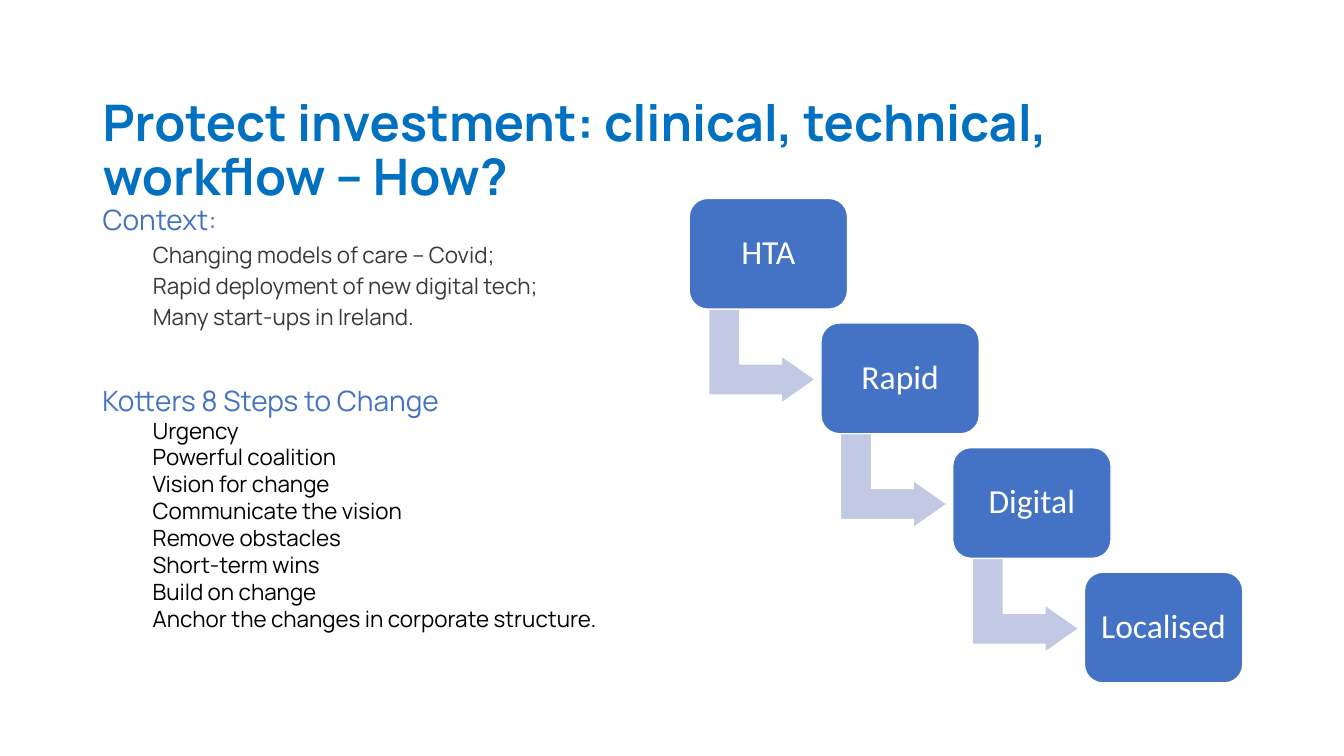
from lxml import etree
from pptx import Presentation
from pptx.dml.color import RGBColor
from pptx.enum.shapes import MSO_SHAPE
from pptx.enum.text import MSO_ANCHOR, MSO_AUTO_SIZE, PP_ALIGN
from pptx.oxml.ns import qn
from pptx.util import Cm, Pt

ROUNDED = MSO_SHAPE.ROUNDED_RECTANGLE
BENT_ARROW = MSO_SHAPE.BENT_UP_ARROW
TOP, MIDDLE = MSO_ANCHOR.TOP, MSO_ANCHOR.MIDDLE
LEFT, CENTER = PP_ALIGN.LEFT, PP_ALIGN.CENTER
NO_FIT = MSO_AUTO_SIZE.NONE

COLORS = {
    "title": "0070C0",
    "blue": "4472C4",
    "arrow": "C1C9E4",
    "grey": "3B3838",
    "black": "000000",
    "white": "FFFFFF",
}


def add_run(p, text, size, color, font="Manrope", bold=False):
    r = p.add_run()
    r.text = text
    r.font.name = font
    r.font.size = Pt(size)
    r.font.bold = bold
    r.font.color.rgb = RGBColor.from_string(COLORS[color])


def add_list(tf, heading, items, color, spacing, before):
    tf.word_wrap = True
    tf.auto_size = NO_FIT
    tf.vertical_anchor = TOP
    for i, text in enumerate([heading] + items):
        p = tf.paragraphs[0] if i == 0 else tf.add_paragraph()
        p.level = min(i, 1)
        p.alignment = LEFT
        p.line_spacing = spacing
        p.space_before = Pt(before if i else 0)
        pPr = p._p.get_or_add_pPr()
        pPr.set("marL", str(Cm(1.27) if i else 0))
        pPr.set("indent", "0")
        etree.SubElement(pPr, qn("a:buNone"))
        add_run(p, text, 16 if i else 20, color if i else "blue")


prs = Presentation()
prs.slide_width, prs.slide_height = Cm(33.87), Cm(19.05)
s = prs.slides.add_slide(prs.slide_layouts[1])

title = s.shapes.title
title.left, title.top, title.width, title.height = Cm(2.33), Cm(2.33), Cm(29.21), Cm(3.68)
tf = title.text_frame
tf.word_wrap = True
tf.auto_size = NO_FIT
tf.vertical_anchor = TOP
p = tf.paragraphs[0]
p.alignment = LEFT
p.line_spacing = 0.9
add_run(p, "Protect investment: clinical, technical, workflow – How?", 36, "title", bold=True)

body = s.placeholders[1]
body.left, body.top, body.width, body.height = Cm(2.33), Cm(5.08), Cm(14.05), Cm(4.45)
add_list(body.text_frame, "Context:", [
    "Changing models of care – Covid;",
    "Rapid deployment of new digital tech;",
    "Many start-ups in Ireland.",
], "grey", 0.9, 5)

steps = ["HTA", "Rapid", "Digital", "Localised"]
for i, step in enumerate(steps):
    dx, dy = 3.32 * i, 3.14 * i
    parts = [(ROUNDED, 17.37, 5.0, 3.99, 2.79, "blue", [0.167])]
    if i < len(steps) - 1:
        parts.insert(0, (BENT_ARROW, 18.01, 7.62, 2.39, 2.69, "arrow", [0.328, 0.25, 0.358]))
    for kind, x, y, w, h, color, adjustments in parts:
        sp = s.shapes.add_shape(kind, Cm(x + dx), Cm(y + dy), Cm(w), Cm(h))
        sp.shadow.inherit = False
        sp.fill.solid()
        sp.fill.fore_color.rgb = RGBColor.from_string(COLORS[color])
        sp.line.color.rgb = RGBColor.from_string(COLORS["white"])
        sp.line.width = Pt(1)
        for n, value in enumerate(adjustments):
            sp.adjustments[n] = value
        if kind == BENT_ARROW:
            sp.rotation = 90
            continue
        tf = sp.text_frame
        tf.word_wrap = True
        tf.vertical_anchor = MIDDLE
        tf.margin_left = tf.margin_right = Cm(0.1)
        p = tf.paragraphs[0]
        p.alignment = CENTER
        p.line_spacing = 0.9
        add_run(p, step, 24, "white", "Calibri")

kotter = s.shapes.add_textbox(Cm(2.33), Cm(9.53), Cm(14.05), Cm(7.34))
add_list(kotter.text_frame, "Kotters 8 Steps to Change", [
    "Urgency",
    "Powerful coalition",
    "Vision for change",
    "Communicate the vision",
    "Remove obstacles",
    "Short-term wins",
    "Build on change",
    "Anchor the changes in corporate structure.",
], "black", 1.0, 0)

prs.save("out.pptx")
